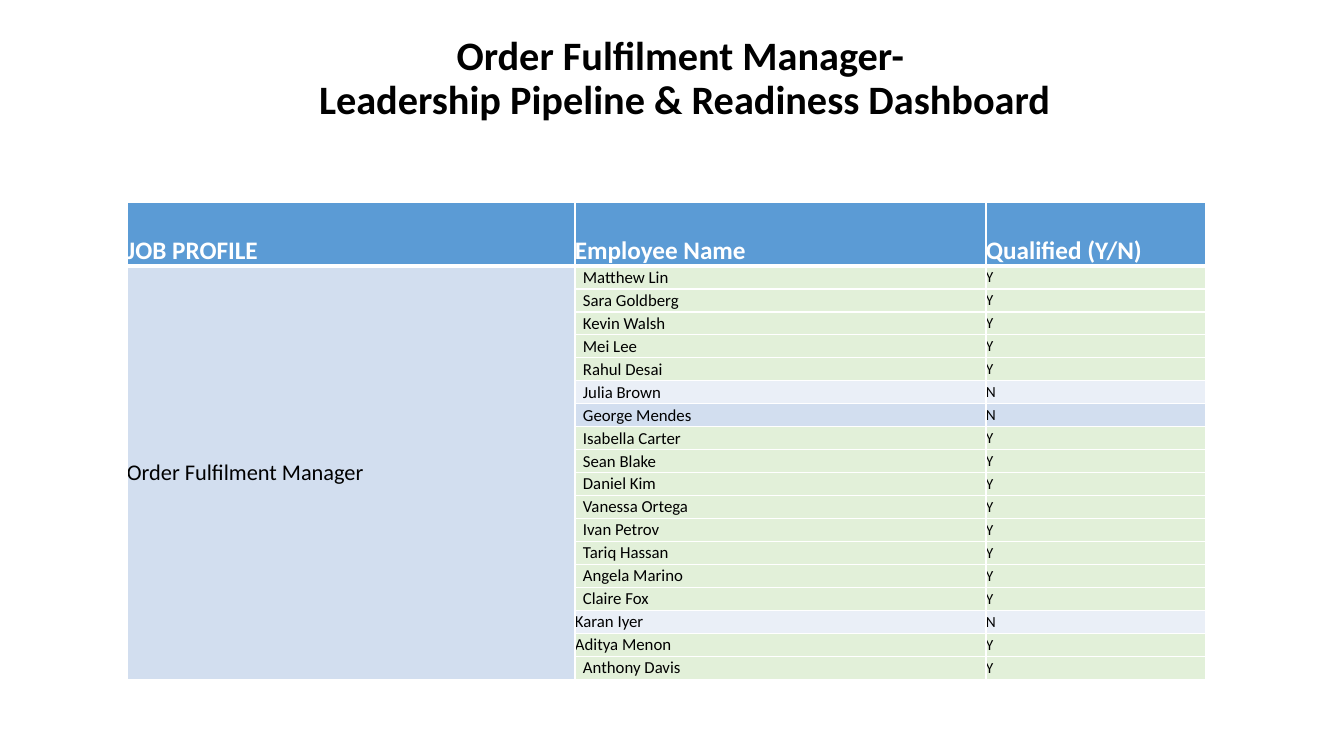
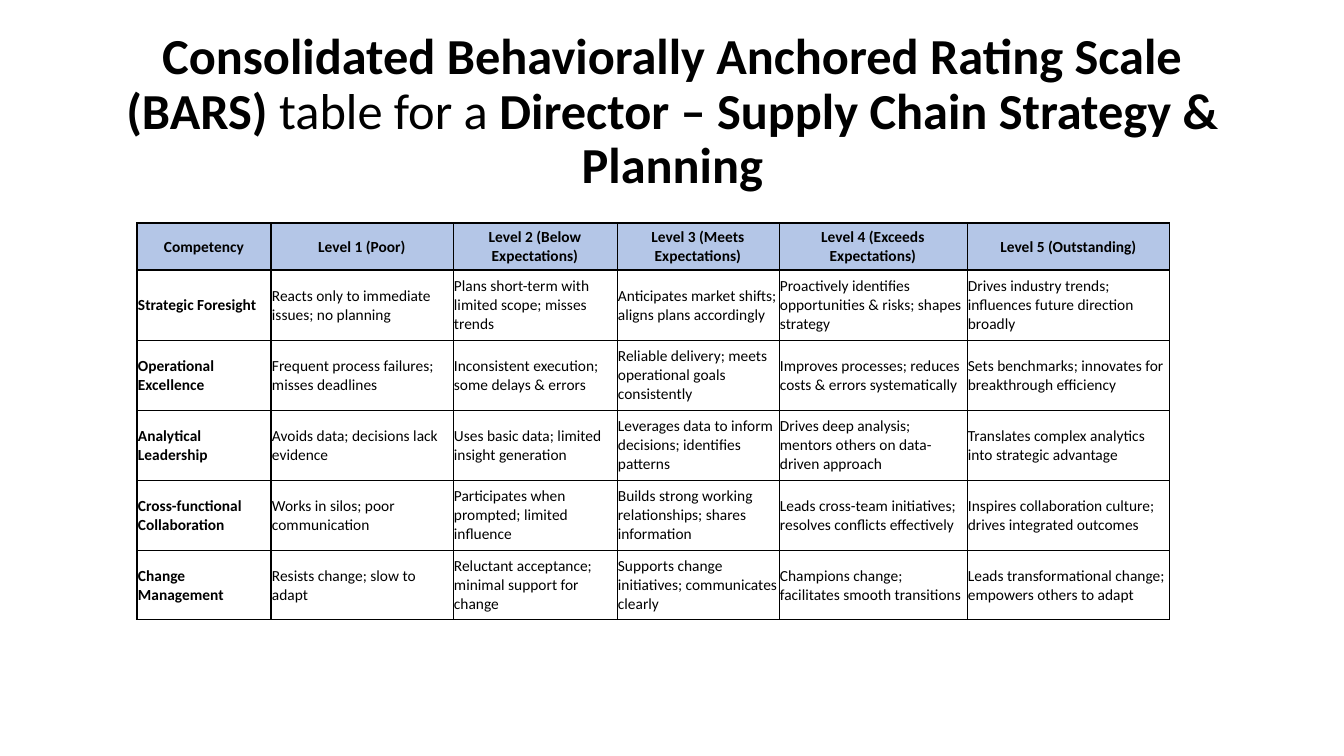
"""Build a two-slide deck: a leadership readiness table and a rating scale table."""
import pptx
import pptx.dml.color
import pptx.enum.text
import pptx.oxml.ns
import pptx.util
from dataclasses import dataclass
from lxml import etree

ALIGN = pptx.enum.text.PP_ALIGN
ANCHOR = pptx.enum.text.MSO_ANCHOR


@dataclass(frozen=True)
class Theme:
    font: str = "Calibri"
    black: str = "000000"
    white: str = "FFFFFF"
    blue: str = "5B9BD5"
    pale: str = "D2DEEF"
    mist: str = "EAEFF7"
    green: str = "E2F0D9"
    sky: str = "B4C6E7"
    title: float = 28.8
    large: int = 36
    head: int = 18
    job: int = 16
    name: int = 12
    small: int = 11


THEME = Theme()
WIDE, HIGH = 1344, 756

READY_TITLE = [("Order Fulfilment Manager-\n Leadership Pipeline & Readiness Dashboard", True)]
READY_HEAD = ["JOB PROFILE", "Employee Name", "Qualified (Y/N)"]
JOB = "Order Fulfilment Manager"
STAFF = [
    ("Matthew Lin", "Y"), ("Sara Goldberg", "Y"), ("Kevin Walsh", "Y"),
    ("Mei Lee", "Y"), ("Rahul Desai", "Y"), ("Julia Brown", "N"),
    ("George Mendes", "N"), ("Isabella Carter", "Y"), ("Sean Blake", "Y"),
    ("Daniel Kim", "Y"), ("Vanessa Ortega", "Y"), ("Ivan Petrov", "Y"),
    ("Tariq Hassan", "Y"), ("Angela Marino", "Y"), ("Claire Fox", "Y"),
    ("Karan Iyer", "N"), ("Aditya Menon", "Y"), ("Anthony Davis", "Y"),
]
FLUSH = {"Karan Iyer", "Aditya Menon"}

SCALE_TITLE = [
    ("Consolidated Behaviorally Anchored Rating Scale (BARS)", True),
    (" table for a ", False),
    ("Director – Supply Chain Strategy & Planning", True),
]
SCALE = [
    ["Competency", "Level 1 (Poor)", "Level 2 (Below Expectations)",
     "Level 3 (Meets Expectations)", "Level 4 (Exceeds Expectations)",
     "Level 5 (Outstanding)"],
    ["Strategic Foresight", "Reacts only to immediate issues; no planning",
     "Plans short-term with limited scope; misses trends",
     "Anticipates market shifts; aligns plans accordingly",
     "Proactively identifies opportunities & risks; shapes strategy",
     "Drives industry trends; influences future direction broadly"],
    ["Operational Excellence", "Frequent process failures; misses deadlines",
     "Inconsistent execution; some delays & errors",
     "Reliable delivery; meets operational goals consistently",
     "Improves processes; reduces costs & errors systematically",
     "Sets benchmarks; innovates for breakthrough efficiency"],
    ["Analytical Leadership", "Avoids data; decisions lack evidence",
     "Uses basic data; limited insight generation",
     "Leverages data to inform decisions; identifies patterns",
     "Drives deep analysis; mentors others on data-driven approach",
     "Translates complex analytics into strategic advantage"],
    ["Cross-functional Collaboration", "Works in silos; poor communication",
     "Participates when prompted; limited influence",
     "Builds strong working relationships; shares information",
     "Leads cross-team initiatives; resolves conflicts effectively",
     "Inspires collaboration culture; drives integrated outcomes"],
    ["Change Management", "Resists change; slow to adapt",
     "Reluctant acceptance; minimal support for change",
     "Supports change initiatives; communicates clearly",
     "Champions change; facilitates smooth transitions",
     "Leads transformational change; empowers others to adapt"],
]


def px(count):
    return pptx.util.Emu(round(count * 914400 / 100.8))


def tint(code):
    return pptx.dml.color.RGBColor.from_string(code)


def write(frame, parts, size, color=THEME.black, align=ALIGN.LEFT, space=1.0):
    para = frame.paragraphs[0]
    para.alignment = align
    para.line_spacing = space
    for text, bold in parts:
        for order, line in enumerate(text.split("\n")):
            if order:
                para.add_line_break()
            run = para.add_run()
            run.text = line
            run.font.name = THEME.font
            run.font.size = pptx.util.Pt(size)
            run.font.bold = bold
            run.font.color.rgb = tint(color)


def add_title(slide, parts, size, width, height):
    box = slide.shapes.add_textbox(px(93), px(40), px(width), px(height))
    frame = box.text_frame
    frame.word_wrap = True
    frame.vertical_anchor = ANCHOR.MIDDLE
    write(frame, parts, size, align=ALIGN.CENTER, space=0.9)


def add_grid(slide, left, top, cols, rows):
    shape = slide.shapes.add_table(len(rows), len(cols), px(left), px(top),
                                   px(sum(cols)), px(sum(rows)))
    grid = shape.table
    grid.first_row = grid.horz_banding = False
    for col, width in zip(grid.columns, cols):
        col.width = px(width)
    for row, height in zip(grid.rows, rows):
        row.height = px(height)
    return grid


def border(cell, color, widths):
    props = cell._tc.get_or_add_tcPr()
    for side, width in zip("LRTB", widths):
        line = etree.SubElement(props, pptx.oxml.ns.qn(f"a:ln{side}"),
                                w=str(pptx.util.Pt(width)))
        fill = etree.SubElement(line, pptx.oxml.ns.qn("a:solidFill"))
        etree.SubElement(fill, pptx.oxml.ns.qn("a:srgbClr"), val=color)


def rule(grid, color, thin, thick, cols, rows):
    for r, row in enumerate(grid.rows):
        for c, cell in enumerate(row.cells):
            heavy = (c in cols, c + 1 in cols, r in rows, r + 1 in rows)
            border(cell, color, [thick if bold else thin for bold in heavy])


def fill_cell(cell, text, size, fill=None, bold=False, inset=(0, 0, 0, 0),
              anchor=ANCHOR.MIDDLE, **style):
    cell.margin_left, cell.margin_top, cell.margin_right, cell.margin_bottom = map(px, inset)
    cell.vertical_anchor = anchor
    if fill:
        cell.fill.solid()
        cell.fill.fore_color.rgb = tint(fill)
    else:
        cell.fill.background()
    if text:
        write(cell.text_frame, [(text, bold)], size, **style)


def ready_slide(slide):
    add_title(slide, READY_TITLE, THEME.title, 1175, 79)
    grid = add_grid(slide, 127, 202, [448, 411, 220], [64] + [23] * len(STAFF))
    rule(grid, THEME.white, 1, 3, cols=(), rows=(1,))
    for c, text in enumerate(READY_HEAD):
        fill_cell(grid.cell(0, c), text, THEME.head, THEME.blue, bold=True,
                  anchor=ANCHOR.BOTTOM, color=THEME.white)
    for r, (name, mark) in enumerate(STAFF, 1):
        band = THEME.pale if r % 2 else THEME.mist
        fill = THEME.green if mark == "Y" else band
        inset = (0 if name in FLUSH else 8, 0, 0, 0)
        fill_cell(grid.cell(r, 0), JOB if r == 1 else "", THEME.job, THEME.pale)
        fill_cell(grid.cell(r, 1), name, THEME.name, fill, inset=inset)
        fill_cell(grid.cell(r, 2), mark, THEME.small, fill)
    grid.cell(1, 0).merge(grid.cell(len(STAFF), 0))


def scale_slide(slide):
    add_title(slide, SCALE_TITLE, THEME.large, 1159, 146)
    grid = add_grid(slide, 137, 223, [134, 182, 164, 162, 188, 203],
                    [47] + [70] * (len(SCALE) - 1))
    rule(grid, THEME.black, 0.5, 1, cols=(0, 1, len(SCALE[0])), rows=(0, 1, len(SCALE)))
    for r, row in enumerate(SCALE):
        for c, text in enumerate(row):
            fill_cell(grid.cell(r, c), text, THEME.small,
                      None if r else THEME.sky, bold=r == 0 or c == 0,
                      inset=(1, 1, 1, 0), align=ALIGN.LEFT if r else ALIGN.CENTER)


def main():
    deck = pptx.Presentation()
    deck.slide_width, deck.slide_height = px(WIDE), px(HIGH)
    for build in (ready_slide, scale_slide):
        build(deck.slides.add_slide(deck.slide_layouts[6]))
    deck.save("out.pptx")


if __name__ == "__main__":
    main()
